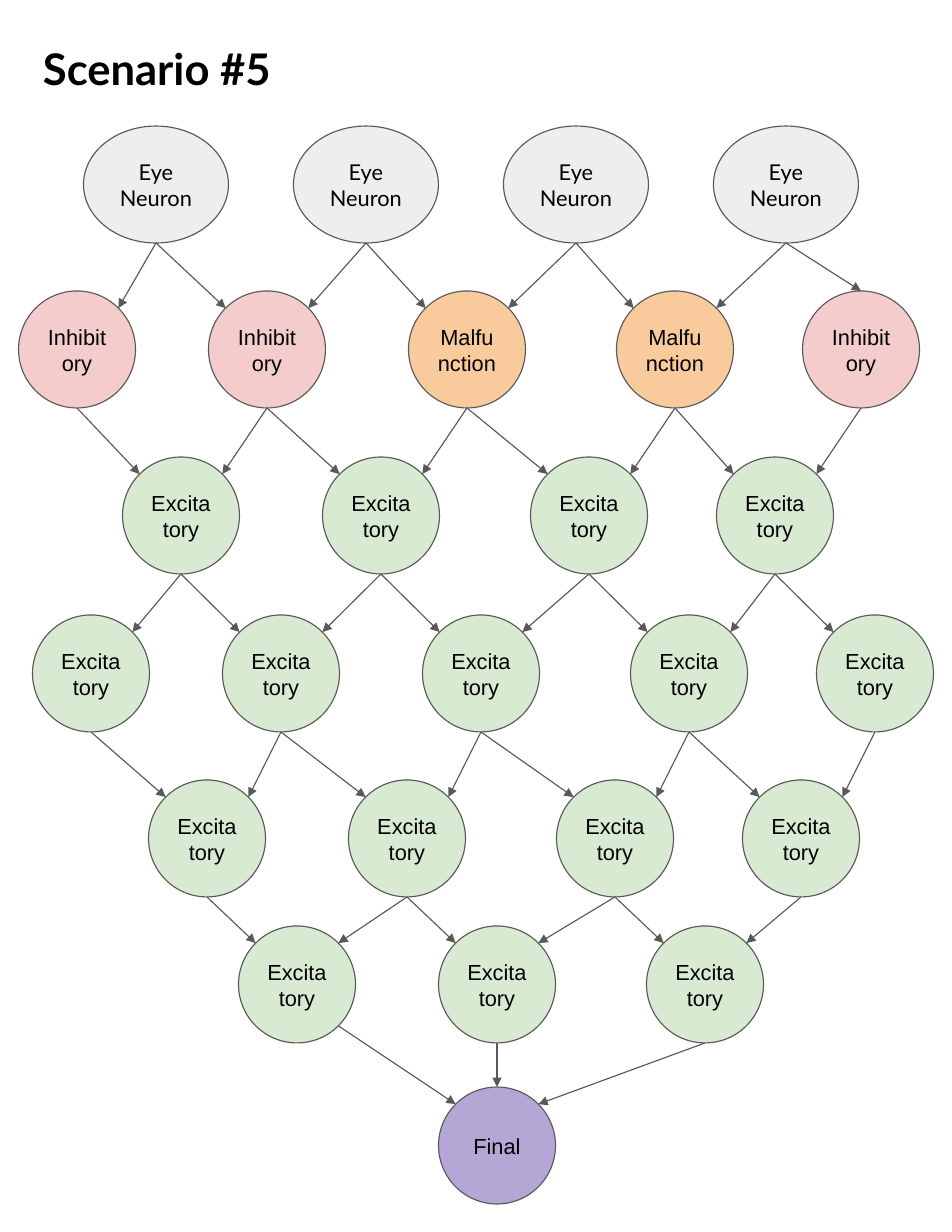
from itertools import accumulate, pairwise
from math import cos, radians, sin

from lxml.etree import SubElement
from pptx import Presentation
from pptx.dml.color import RGBColor
from pptx.enum.shapes import MSO_CONNECTOR as Connector, MSO_SHAPE as Shape
from pptx.enum.text import MSO_ANCHOR as Anchor, PP_ALIGN as Align
from pptx.oxml.ns import qn
from pptx.util import Emu, Pt

EMU_PER_PX = 914400 / 112

BLACK = RGBColor(0x00, 0x00, 0x00)
OUTLINE = RGBColor(0x59, 0x59, 0x59)
GREY = RGBColor(0xEE, 0xEE, 0xEE)
PINK = RGBColor(0xF4, 0xCC, 0xCC)
ORANGE = RGBColor(0xF9, 0xCB, 0x9C)
GREEN = RGBColor(0xD9, 0xEA, 0xD3)
PURPLE = RGBColor(0xB4, 0xA7, 0xD6)

FILLS = {"Eye Neuron": GREY, "Inhibitory": PINK, "Malfunction": ORANGE,
         "Excitatory": GREEN, "Final": PURPLE}

# Connection sites of an ellipse, counted counterclockwise from the top
TOP, TOP_LEFT, BOTTOM, BOTTOM_RIGHT, TOP_RIGHT = 0, 1, 4, 5, 7

DIAMETER = 117
EYE_WIDTH = 145
EYE_GAPS = [210, 210, 210]
WIDE_GAPS = [190, 200, 208, 186]
NARROW_GAPS = WIDE_GAPS[1:]

# Labels, top, centre of the first neuron, gaps between centres
LAYERS = [
    (["Eye Neuron"] * 4, 126, 156, EYE_GAPS),
    (["Inhibitory"] * 2 + ["Malfunction"] * 2 + ["Inhibitory"], 291, 77, WIDE_GAPS),
    (["Excitatory"] * 4, 457, 181, NARROW_GAPS),
    (["Excitatory"] * 5, 615, 91, WIDE_GAPS),
    (["Excitatory"] * 4, 780, 207, NARROW_GAPS),
    (["Excitatory"] * 3, 926, 297, NARROW_GAPS[:2]),
    (["Final"], 1087, 497, []),
]


def px(length):
    return Emu(round(length * EMU_PER_PX))


def write_text(shape, text, font="Arial", size=14, bold=False, align=Align.CENTER):
    frame = shape.text_frame
    frame.word_wrap = True
    frame.vertical_anchor = Anchor.MIDDLE
    frame.margin_left = frame.margin_right = px(11)
    frame.margin_top = frame.margin_bottom = px(11)
    para = frame.paragraphs[0]
    para.alignment = align
    span = para.add_run()
    span.text = text
    span.font.name = font
    span.font.size = Pt(size)
    span.font.bold = bold
    span.font.color.rgb = BLACK


def add_title(page, text):
    title = page.shapes.title
    title.left, title.top, title.width, title.height = map(px, (32, 30, 887, 76))
    write_text(title, text, font="Lato", size=28, bold=True, align=Align.LEFT)


def add_neuron(page, label, center, top):
    is_eye = label == "Eye Neuron"
    width = EYE_WIDTH if is_eye else DIAMETER
    neuron = page.shapes.add_shape(
        Shape.OVAL, px(center - width / 2), px(top), px(width), px(DIAMETER))
    neuron.shadow.inherit = False
    neuron.fill.solid()
    neuron.fill.fore_color.rgb = FILLS[label]
    neuron.line.color.rgb = OUTLINE
    neuron.line.width = Pt(0.75)
    write_text(neuron, label, font="Lato" if is_eye else "Arial")
    return neuron


def add_layer(page, labels, top, first, gaps):
    centers = accumulate(gaps, initial=first)
    return [add_neuron(page, label, center, top)
            for label, center in zip(labels, centers)]


def site_point(neuron, site):
    angle = radians(90 + 45 * site)
    x = neuron.left + neuron.width / 2 * (1 + cos(angle))
    y = neuron.top + neuron.height / 2 * (1 - sin(angle))
    return Emu(round(x)), Emu(round(y))


def add_arrow(page, source, target, end_site, start_site=BOTTOM):
    arrow = page.shapes.add_connector(
        Connector.STRAIGHT, *site_point(source, start_site), *site_point(target, end_site))
    arrow.line.color.rgb = OUTLINE
    arrow.line.width = Pt(0.75)
    SubElement(arrow.line._get_or_add_ln(), qn("a:tailEnd"), type="triangle")
    SubElement(arrow._element.spPr, qn("a:effectLst"))
    # Glue both ends to the ellipses' own connection sites
    glue = arrow._element.find(".//" + qn("p:cNvCxnSpPr"))
    for tag, neuron, site in (("a:stCxn", source, start_site), ("a:endCxn", target, end_site)):
        SubElement(glue, qn(tag), id=str(neuron.shape_id), idx=str(site))


def link_layers(page, upper, lower):
    """Send each neuron's signal to its lower left and lower right neighbours."""
    shift = 0 if len(lower) > len(upper) else -1
    for column, source in enumerate(upper):
        for index, site in ((column + shift, TOP_RIGHT), (column + shift + 1, TOP_LEFT)):
            if 0 <= index < len(lower):
                is_outer_eye = upper[0].width > lower[0].width and index == len(lower) - 1
                add_arrow(page, source, lower[index], TOP if is_outer_eye else site)


def main():
    deck = Presentation()
    deck.slide_width, deck.slide_height = px(952), px(1232)
    page = deck.slides.add_slide(deck.slide_layouts[5])
    add_title(page, "Scenario #5")

    # Neurons
    layers = [add_layer(page, *layer) for layer in LAYERS]

    # Signals between the layers
    *network, [final] = layers
    for upper, lower in pairwise(network):
        link_layers(page, upper, lower)

    # Signals into the final neuron
    left, middle, right = network[-1]
    add_arrow(page, left, final, TOP_LEFT, start_site=BOTTOM_RIGHT)
    add_arrow(page, middle, final, TOP)
    add_arrow(page, right, final, TOP_RIGHT)

    deck.save("out.pptx")


if __name__ == "__main__":
    main()
